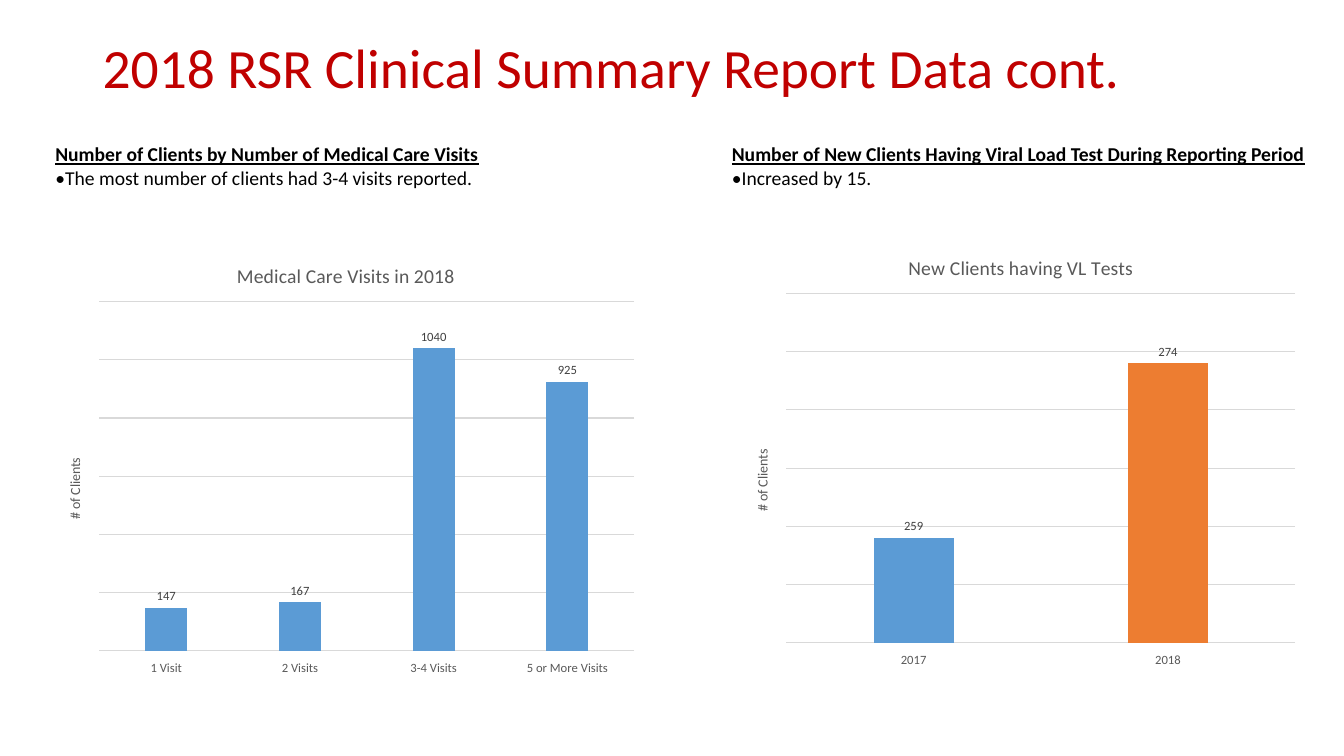
from dataclasses import dataclass

from lxml import etree
from pptx import Presentation
from pptx.chart.data import CategoryChartData
from pptx.dml.color import RGBColor
from pptx.enum.chart import XL_CHART_TYPE, XL_LABEL_POSITION, XL_TICK_LABEL_POSITION, XL_TICK_MARK
from pptx.enum.text import MSO_ANCHOR, MSO_AUTO_SIZE
from pptx.oxml.ns import qn
from pptx.util import Inches, Pt

COLUMN = XL_CHART_TYPE.COLUMN_CLUSTERED
OUTSIDE_END = XL_LABEL_POSITION.OUTSIDE_END
LABELS_LOW = XL_TICK_LABEL_POSITION.LOW
NO_TICK = XL_TICK_MARK.NONE
MIDDLE = MSO_ANCHOR.MIDDLE
FIT_SHAPE = MSO_AUTO_SIZE.SHAPE_TO_FIT_TEXT

FONT = "Calibri"
RED = RGBColor(0xC0, 0x00, 0x00)
BLACK = RGBColor(0x00, 0x00, 0x00)
GRAY = RGBColor(0x59, 0x59, 0x59)
DARK_GRAY = RGBColor(0x40, 0x40, 0x40)
LIGHT_GRAY = RGBColor(0xD9, 0xD9, 0xD9)
BLUE = RGBColor(0x5B, 0x9B, 0xD5)
ORANGE = RGBColor(0xED, 0x7D, 0x31)


@dataclass
class Box:
    left: float
    top: float
    width: float
    height: float

    def lengths(self):
        return [Inches(v) for v in (self.left, self.top, self.width, self.height)]


@dataclass
class Panel:
    heading: str
    finding: str
    text_box: Box
    wrap: bool
    chart_title: str
    chart_box: Box
    plot: Box
    values: dict[str, int]
    colors: list[RGBColor]
    axis_range: tuple[int, int, int]


PANELS = [
    Panel(
        "Number of Clients by Number of Medical Care Visits",
        "•The most number of clients had 3-4 visits reported.",
        Box(0.45, 1.36, 6.14, 0.57), True,
        "Medical Care Visits in 2018",
        Box(0.45, 2.43, 5.96, 4.33), Box(0.09, 0.13, 0.89, 0.8),
        {"1 Visit": 147, "2 Visits": 167, "3-4 Visits": 1040, "5 or More Visits": 925},
        [BLUE], (0, 1200, 200),
    ),
    Panel(
        "Number of New Clients Having Viral Load Test During Reporting Period",
        "•Increased by 15.",
        Box(7.16, 1.36, 5.92, 0.57), False,
        "New Clients having VL Tests",
        Box(7.29, 2.35, 5.67, 4.33), Box(0.09, 0.13, 0.89, 0.8),
        {"2017": 259, "2018": 274},
        [BLUE, ORANGE], (250, 280, 5),
    ),
]


def style_font(font, size: float, color: RGBColor, bold: bool = False) -> None:
    font.name = FONT
    font.size = Pt(size)
    font.bold = bold
    font.color.rgb = color


def add_run(p, text: str, size: float, color: RGBColor, bold: bool = False):
    r = p.add_run()
    r.text = text
    style_font(r.font, size, color, bold)
    return r


def add_title(slide, text: str) -> None:
    tf = slide.shapes.add_textbox(*Box(0.92, 0.4, 11.5, 0.59).lengths()).text_frame
    tf.word_wrap = True
    tf.vertical_anchor = MIDDLE
    p = tf.paragraphs[0]
    p.line_spacing = 0.9
    add_run(p, text, 39.6, RED)


def add_summary(slide, panel: Panel) -> None:
    tf = slide.shapes.add_textbox(*panel.text_box.lengths()).text_frame
    tf.word_wrap = panel.wrap
    tf.auto_size = FIT_SHAPE
    add_run(tf.paragraphs[0], panel.heading, 14, BLACK, True).font.underline = True
    add_run(tf.add_paragraph(), panel.finding, 14, BLACK)


def set_plot_layout(chart, plot: Box) -> None:
    area = chart._chartSpace.chart.plotArea
    for old in area.findall(qn("c:layout")):
        area.remove(old)
    layout = etree.Element(qn("c:layout"))
    manual = etree.SubElement(layout, qn("c:manualLayout"))
    settings = {
        "layoutTarget": "inner", "xMode": "edge", "yMode": "edge",
        "x": plot.left, "y": plot.top, "w": plot.width, "h": plot.height,
    }
    for tag, value in settings.items():
        etree.SubElement(manual, qn(f"c:{tag}")).set("val", str(value))
    area.insert(0, layout)


def add_column_chart(slide, panel: Panel) -> None:
    data = CategoryChartData()
    data.categories = list(panel.values)
    data.add_series("Series 1", panel.values.values())
    chart = slide.shapes.add_chart(COLUMN, *panel.chart_box.lengths(), data).chart
    style_font(chart.font, 10, BLACK)
    chart.has_legend = False
    chart.has_title = True
    add_run(chart.chart_title.text_frame.paragraphs[0], panel.chart_title, 14, GRAY)
    chart.chart_title.include_in_layout = False
    set_plot_layout(chart, panel.plot)

    cat_axis = chart.category_axis
    cat_axis.major_tick_mark = cat_axis.minor_tick_mark = NO_TICK
    cat_axis.tick_label_position = LABELS_LOW
    style_font(cat_axis.tick_labels.font, 9, GRAY)
    cat_axis.format.line.color.rgb = LIGHT_GRAY
    cat_axis.format.line.width = Pt(0.75)

    val_axis = chart.value_axis
    val_axis.minimum_scale, val_axis.maximum_scale, val_axis.major_unit = panel.axis_range
    val_axis.has_major_gridlines = True
    grid = val_axis.major_gridlines.format.line
    grid.color.rgb = LIGHT_GRAY
    grid.width = Pt(0.75)
    val_axis.has_title = True
    add_run(val_axis.axis_title.text_frame.paragraphs[0], "# of Clients", 10, GRAY)
    val_axis.visible = False

    plot = chart.plots[0]
    plot.gap_width = 219
    plot.overlap = -27
    plot.vary_by_categories = False
    series = plot.series[0]
    fill = series.format.fill
    fill.solid()
    fill.fore_color.rgb = panel.colors[0]
    for i, color in enumerate(panel.colors[1:], start=1):
        fill = series.points[i].format.fill
        fill.solid()
        fill.fore_color.rgb = color
    labels = series.data_labels
    labels.show_value = True
    labels.position = OUTSIDE_END
    style_font(labels.font, 9, DARK_GRAY)


def main() -> None:
    prs = Presentation()
    prs.slide_width = Inches(13.33)
    prs.slide_height = Inches(7.5)
    slide = prs.slides.add_slide(prs.slide_layouts[6])
    add_title(slide, "2018 RSR Clinical Summary Report Data cont.")
    for panel in PANELS:
        add_summary(slide, panel)
        add_column_chart(slide, panel)
    prs.save("out.pptx")


if __name__ == "__main__":
    main()
